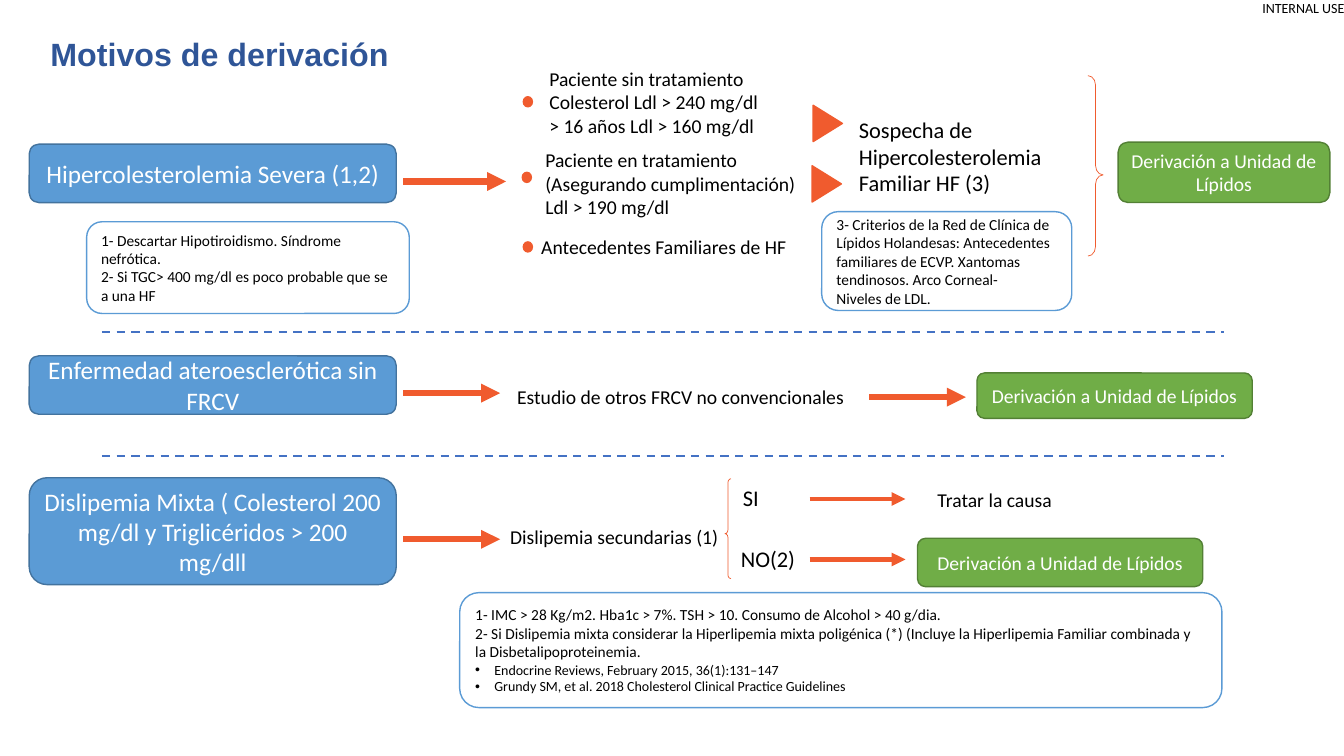
import pptx
import pptx.util
import pptx.dml.color
import pptx.enum.dml
import pptx.enum.shapes
import pptx.enum.text
import pptx.oxml.ns
from lxml import etree

PX = 9144
RGB = pptx.dml.color.RGBColor
BLACK = RGB(0x00, 0x00, 0x00)
WHITE = RGB(0xFF, 0xFF, 0xFF)
BLUE = RGB(0x5B, 0x9B, 0xD5)
NAVY = RGB(0x43, 0x73, 0x9E)
GREEN = RGB(0x70, 0xAD, 0x47)
MOSS = RGB(0x53, 0x80, 0x35)
ORANGE = RGB(0xF0, 0x5B, 0x2E)
DASH = RGB(0x44, 0x72, 0xC4)
TITLE = RGB(0x2F, 0x55, 0x97)
KIND = pptx.enum.shapes.MSO_SHAPE
ALIGN = pptx.enum.text.PP_ALIGN
ANCHOR = pptx.enum.text.MSO_ANCHOR
FIT = pptx.enum.text.MSO_AUTO_SIZE.SHAPE_TO_FIT_TEXT
qn = pptx.oxml.ns.qn

deck = pptx.Presentation()
deck.slide_width = 1333 * PX
deck.slide_height = 750 * PX
slide = deck.slides.add_slide(deck.slide_layouts[6])
shapes = slide.shapes


def write(frame, lines, size, color, align=ALIGN.LEFT, face="Calibri", bold=False):
    for i, line in enumerate(lines):
        para = frame.paragraphs[0] if i == 0 else frame.add_paragraph()
        para.alignment = align
        cite = line.startswith("•")
        if cite:
            props = para._p.get_or_add_pPr()
            props.set("marL", str(19 * PX))
            props.set("indent", str(-19 * PX))
            etree.SubElement(props, qn("a:buFont")).set("typeface", "Arial")
            etree.SubElement(props, qn("a:buChar")).set("char", "•")
        run = para.add_run()
        run.text = line.lstrip("•")
        run.font.name = face
        run.font.size = pptx.util.Pt(10 if cite else size)
        run.font.bold = bold
        run.font.color.rgb = color


def draw(kind, box, fill, edge, width=1):
    shape = shapes.add_shape(kind, *[n * PX for n in box])
    shape.shadow.inherit = False
    if fill is None:
        shape.fill.background()
    else:
        shape.fill.solid()
        shape.fill.fore_color.rgb = fill
    shape.line.color.rgb = edge
    shape.line.width = pptx.util.Pt(width)
    return shape


unit = "Derivación a Unidad de Lípidos"
cards = [
    ((29, 143, 364, 58), BLUE, NAVY, 18, ["Hipercolesterolemia Severa (1,2)"]),
    ((29, 353, 364, 58), BLUE, NAVY, 18, ["Enfermedad ateroesclerótica sin FRCV"]),
    ((29, 474, 364, 106), BLUE, NAVY, 18,
     ["Dislipemia Mixta ( Colesterol 200 mg/dl y Triglicéridos > 200 mg/dll"]),
    ((1109, 141, 210, 60), GREEN, MOSS, 14, [unit]),
    ((969, 370, 273, 45), GREEN, MOSS, 14, [unit]),
    ((910, 534, 283, 48), GREEN, MOSS, 14, [unit]),
    ((86, 220, 320, 91), WHITE, BLUE, 11, [
        "1- Descartar Hipotiroidismo. Síndrome nefrótica.",
        "2- Si TGC> 400 mg/dl es poco probable que se a una HF"]),
    ((815, 210, 248, 98), WHITE, BLUE, 11, [
        "3- Criterios de la Red de Clínica de Lípidos Holandesas: Antecedentes "
        "familiares de ECVP. Xantomas tendinosos. Arco Corneal-",
        "Niveles de LDL."]),
    ((456, 588, 756, 114), WHITE, BLUE, 11, [
        "1- IMC > 28 Kg/m2. Hba1c > 7%. TSH > 10. Consumo de Alcohol > 40 g/dia.",
        "2- Si Dislipemia mixta considerar la Hiperlipemia mixta poligénica (*) "
        "(Incluye la Hiperlipemia Familiar combinada y la Disbetalipoproteinemia.",
        "•Endocrine Reviews, February 2015, 36(1):131–147",
        "•Grundy SM, et al. 2018 Cholesterol Clinical Practice Guidelines"]),
]
for box, fill, edge, size, lines in cards:
    card = draw(KIND.ROUNDED_RECTANGLE, box, fill, edge)
    frame = card.text_frame
    frame.word_wrap = True
    frame.vertical_anchor = ANCHOR.MIDDLE
    note = fill == WHITE
    write(frame, lines, size, BLACK if note else WHITE,
          ALIGN.LEFT if note else ALIGN.CENTER)

for left, top in [(803, 108), (802, 168)]:
    draw(KIND.ISOSCELES_TRIANGLE, (left, top, 36, 29), ORANGE, ORANGE).rotation = 90

for left, top in [(519, 96), (518, 171), (519, 240)]:
    draw(KIND.OVAL, (left, top, 9, 10), ORANGE, ORANGE)

for box, turn, mid in [((1079, 75, 15, 179), 180, 0.45), ((719, 475, 6, 99), 0, 0.55)]:
    brace = draw(KIND.LEFT_BRACE, box, None, ORANGE, 0.5)
    brace.rotation = turn
    brace.adjustments[0] = 0.62
    brace.adjustments[1] = mid

links = [
    (400, 502, 180, 4.5), (400, 496, 390, 4.5), (862, 958, 394, 4.5),
    (400, 496, 535, 4.5), (803, 898, 495, 3.25), (803, 898, 555, 3.25),
    (101, 1214, 329, 1.5), (101, 1214, 452, 1.5),
]
for start, end, y, width in links:
    link = shapes.add_connector(pptx.enum.shapes.MSO_CONNECTOR.STRAIGHT,
                                start * PX, y * PX, end * PX, y * PX)
    link.line.width = pptx.util.Pt(width)
    if width == 1.5:
        link.line.color.rgb = DASH
        link.line.dash_style = pptx.enum.dml.MSO_LINE.DASH
    else:
        link.line.color.rgb = ORANGE
        tip = etree.SubElement(link.line._get_or_add_ln(), qn("a:tailEnd"))
        tip.set("type", "triangle")
    etree.SubElement(link._element.spPr, qn("a:effectLst"))

labels = [
    ((727, 475, 36, 37), 16, False, ["SI"]),
    ((725, 536, 75, 37), 16, False, ["NO(2)"]),
    ((535, 61, 228, 81), 14, True, [
        "Paciente sin tratamiento",
        "Colesterol Ldl > 240 mg/dl",
        "> 16 años Ldl > 160 mg/dl"]),
    ((531, 142, 271, 81), 14, True, [
        "Paciente en tratamiento (Asegurando cumplimentación)",
        "Ldl > 190 mg/dl"]),
    ((527, 228, 266, 34), 14, False, ["Antecedentes Familiares de HF"]),
    ((842, 110, 202, 91), 16, True, ["Sospecha de Hipercolesterolemia Familiar HF (3)"]),
    ((503, 377, 348, 34), 14, False, ["Estudio de otros FRCV no convencionales"]),
    ((496, 516, 229, 64), 14, False, ["Dislipemia secundarias (1)"]),
    ((920, 479, 180, 34), 14, True, ["Tratar la causa"]),
    ((1252, 0, 85, 17), 10, True, ["INTERNAL USE"]),
    ((47, 31, 358, 44), 23, True, ["Motivos de derivación"]),
]
for box, size, wrap, lines in labels:
    frame = shapes.add_textbox(*[n * PX for n in box]).text_frame
    frame.word_wrap = wrap
    frame.auto_size = FIT
    head = size == 23
    if head or size == 10:
        pad = 3 * PX if head else 0
        frame.margin_left = frame.margin_right = pad
        frame.margin_top = frame.margin_bottom = pad
    if head:
        frame.vertical_anchor = ANCHOR.MIDDLE
        write(frame, lines, size, TITLE, face="Arial", bold=True)
    else:
        write(frame, lines, size, BLACK)

deck.save("out.pptx")
